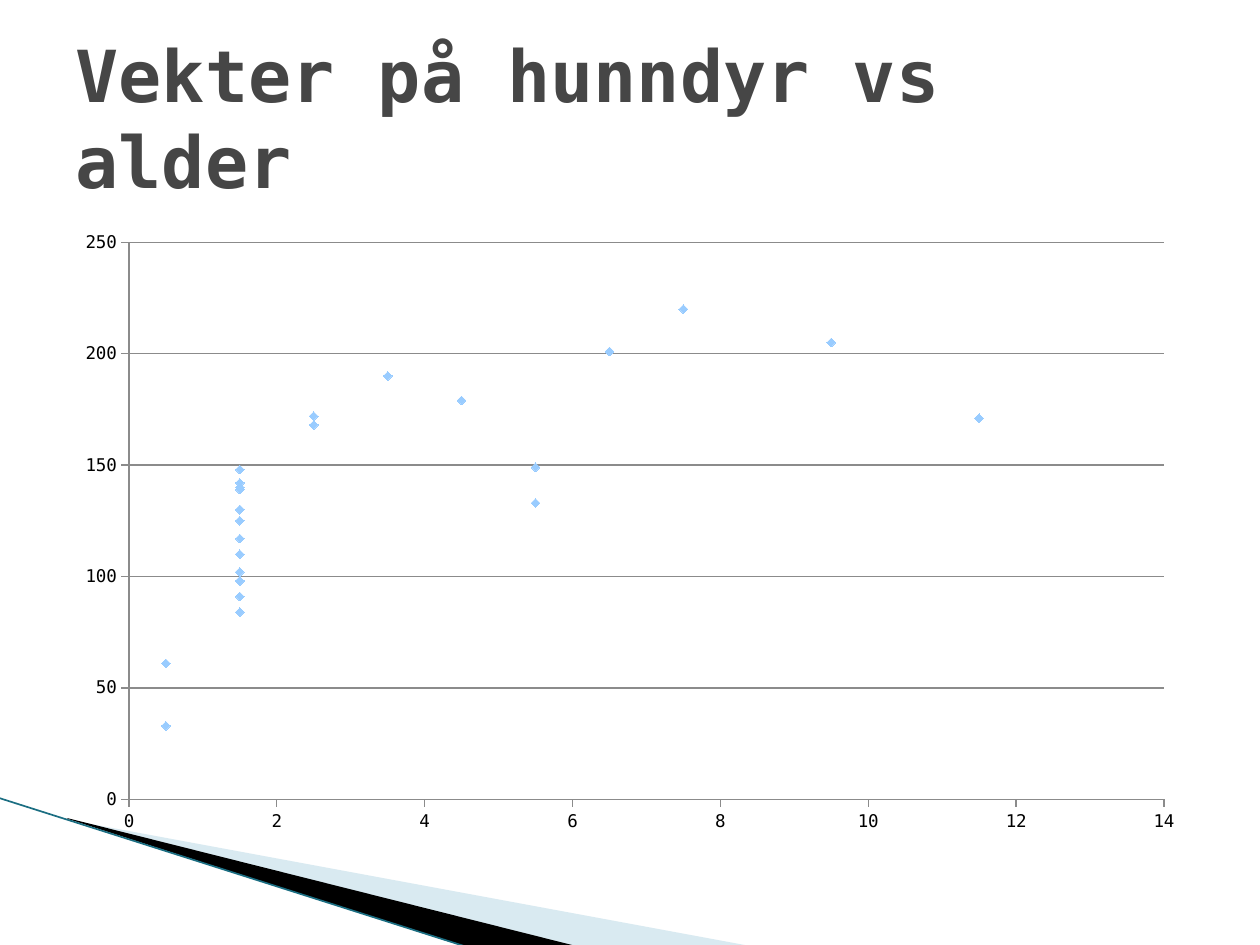
from pptx import Presentation
from pptx.chart.data import XyChartData
from pptx.dml.color import RGBColor
from pptx.enum.chart import XL_CHART_TYPE as ChartType, XL_MARKER_STYLE as Marker, XL_TICK_MARK as Tick
from pptx.enum.shapes import MSO_CONNECTOR as Connector
from pptx.enum.text import MSO_ANCHOR as Anchor, PP_ALIGN as Align
from pptx.oxml.ns import qn
from pptx.util import Pt
from lxml import etree

PX = 914400 // 126
FONT = "DejaVu Sans Mono"
COLORS = {
    "title": "464646", "text": "000000", "axis": "8B8B8B", "point": "99CCFF",
    "light": "A0CBDC", "dark": "000000", "edge": "1B6E82",
}
AGES = [
    1.5, 1.5, 1.5, 4.5, 1.5, 7.5, 9.5, 1.5, 0.5, 1.5, 1.5, 1.5, 2.5, 2.5,
    3.5, 1.5, 5.5, 5.5, 0.5, 11.5, 6.5, 1.5, 1.5, 1.5, 1.5, 1.5, 1.5,
]
KILOS = [
    139, 148, 98, 179, 98, 220, 205, 130, 33, 130, 117, 84, 172, 168,
    190, 140, 149, 133, 61, 171, 201, None, 102, 91, 142, 125, 110,
]


def rgb(name):
    return RGBColor.from_string(COLORS[name])


prs = Presentation()
prs.slide_width, prs.slide_height = 1260 * PX, 945 * PX
slide = prs.slides.add_slide(prs.slide_layouts[5])
shapes = slide.shapes

wedges = [
    ("light", [(69, 820), (750, 946), (575, 946), (69, 819)]),
    ("dark", [(67, 818), (576, 946), (469, 948), (68, 819)]),
]
for color, corners in wedges:
    outline = shapes.build_freeform(*corners[0], scale=PX)
    outline.add_line_segments(corners[1:], close=True)
    wedge = outline.convert_to_shape()
    wedge.shadow.inherit = False
    wedge.fill.solid()
    wedge.fill.fore_color.rgb = rgb(color)
    wedge.line.fill.background()
    if color == "light":
        tint = wedge._element.spPr.find(".//" + qn("a:srgbClr"))
        etree.SubElement(tint, qn("a:alpha")).set("val", "40000")

edge = shapes.add_connector(Connector.STRAIGHT, -1 * PX, 798 * PX, 467 * PX, 947 * PX)
edge.line.color.rgb = rgb("edge")
edge.line.width = Pt(0.95)
etree.SubElement(edge._element.spPr, qn("a:effectLst"))

title = shapes.title
title.left, title.top, title.width, title.height = 63 * PX, 38 * PX, 1134 * PX, 157 * PX
title.text_frame.text = "Vekter på hunndyr vs alder"
title.text_frame.word_wrap = True
title.text_frame.vertical_anchor = Anchor.MIDDLE
heading = title.text_frame.paragraphs[0]
heading.alignment = Align.LEFT
heading_font = heading.runs[0].font
heading_font.name, heading_font.size, heading_font.bold = FONT, Pt(41), True
heading_font.color.rgb = rgb("title")

weights = XyChartData()
females = weights.add_series("Series 1")
for age, kilo in zip(AGES, KILOS):
    females.add_data_point(age, kilo)

chart = shapes.add_chart(
    ChartType.XY_SCATTER, 63 * PX, 220 * PX, 1134 * PX, 624 * PX, weights
).chart
chart.has_legend = False
chart.has_title = False
chart.font.name, chart.font.size = FONT, Pt(10)
chart.font.color.rgb = rgb("text")

plot = chart.plots[0]
plot.vary_by_categories = False
points = plot.series[0]
points.smooth = False
points.format.line.fill.background()
points.marker.style = Marker.DIAMOND
points.marker.size = 5
points.marker.format.fill.solid()
points.marker.format.fill.fore_color.rgb = rgb("point")
points.marker.format.line.fill.background()
weight_cache = points._element.find(".//" + qn("c:yVal")).find(".//" + qn("c:numCache"))
for weight in weight_cache.findall(qn("c:pt")):
    if KILOS[int(weight.get("idx"))] is None:
        weight_cache.remove(weight)

for axis, top, step in [(chart.category_axis, 14, 2), (chart.value_axis, 250, 50)]:
    axis.minimum_scale, axis.maximum_scale, axis.major_unit = 0, top, step
    axis.major_tick_mark = Tick.OUTSIDE
    axis.minor_tick_mark = Tick.NONE
    axis.tick_labels.number_format = "General"
    axis.tick_labels.number_format_is_linked = False
    axis.format.line.color.rgb = rgb("axis")
    axis.format.line.width = Pt(0.75)
chart.category_axis.has_major_gridlines = False
chart.value_axis.has_major_gridlines = True
grid = chart.value_axis.major_gridlines.format.line
grid.color.rgb = rgb("axis")
grid.width = Pt(0.75)

prs.save("out.pptx")
